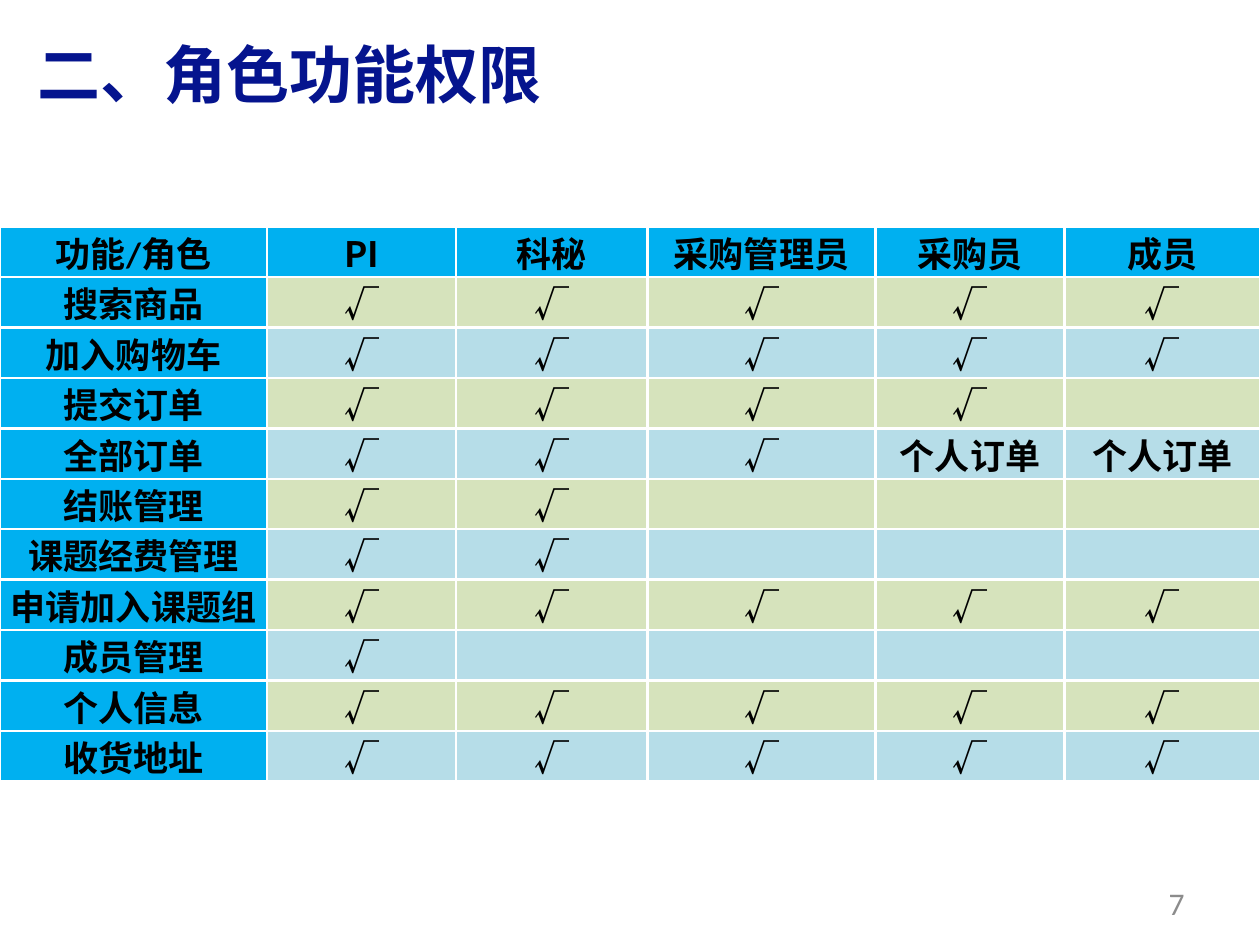
from dataclasses import dataclass

from lxml.etree import SubElement
from pptx import Presentation
from pptx.dml.color import RGBColor
from pptx.enum.text import MSO_ANCHOR as Anchor, PP_ALIGN as Align
from pptx.oxml.ns import qn
from pptx.util import Inches, Pt

W, H = 10, 7.5
LATIN, CJK = "Calibri", "Noto Sans CJK SC"
COLORS = {
    "title": "05148E", "number": "8C8C8C", "text": "000000", "border": "FFFFFF",
    "head": "00B0F0", "odd": "D6E3BC", "even": "B6DDE8",
}
COL_WIDTHS = [2.12, 1.5, 1.52, 1.81, 1.5, 1.55]
ROW_HEIGHT = 0.4
ROLES = ["功能/角色", "PI", "科秘", "采购管理员", "采购员", "成员"]
TICK = "√"


@dataclass
class Label:
    text: str
    left: float
    top: float
    width: float
    height: float
    size: int
    color: str
    font: str
    bold: bool = False
    align: Align = Align.LEFT
    anchor: Anchor = Anchor.TOP
    spacing: float = 1.0


@dataclass
class Permission:
    name: str
    ticks: int
    notes: tuple[str, ...] = ()

    def cells(self) -> list[str]:
        row = [self.name, *[TICK] * self.ticks, *self.notes]
        return row + [""] * (len(ROLES) - len(row))


LABELS = [
    Label("二、角色功能权限", 0.02, 0.04, 0.56, 0.07, 36, "title", CJK,
          bold=True, spacing=0.9),
    Label("7", 0.72, 0.93, 0.23, 0.05, 18, "number", LATIN,
          align=Align.RIGHT, anchor=Anchor.MIDDLE),
]
PERMISSIONS = [
    Permission("搜索商品", 5),
    Permission("加入购物车", 5),
    Permission("提交订单", 4),
    Permission("全部订单", 3, ("个人订单", "个人订单")),
    Permission("结账管理", 2),
    Permission("课题经费管理", 2),
    Permission("申请加入课题组", 5),
    Permission("成员管理", 1),
    Permission("个人信息", 5),
    Permission("收货地址", 5),
]


def rgb(name: str) -> RGBColor:
    return RGBColor.from_string(COLORS[name])


def add_run(p, text: str, size: int, color: str, font: str, bold: bool) -> None:
    r = p.add_run()
    r.text = text
    r.font.size, r.font.bold, r.font.name = Pt(size), bold, font
    r.font.color.rgb = rgb(color)
    SubElement(r.font._element, qn("a:ea"), typeface=CJK)


def add_label(s, label: Label) -> None:
    sp = s.shapes.add_textbox(Inches(label.left * W), Inches(label.top * H),
                              Inches(label.width * W), Inches(label.height * H))
    tf = sp.text_frame
    tf.word_wrap, tf.vertical_anchor = True, label.anchor
    p = tf.paragraphs[0]
    p.alignment, p.line_spacing = label.align, label.spacing
    add_run(p, label.text, label.size, label.color, label.font, label.bold)


def fill_cell(cell, text: str, fill: str) -> None:
    cell.margin_left = cell.margin_right = Inches(0.07)
    cell.margin_top = cell.margin_bottom = 0
    if text:
        p = cell.text_frame.paragraphs[0]
        p.alignment = Align.CENTER
        add_run(p, text, 20, "text", CJK if text in (TICK, "PI") else LATIN, True)
    props = cell._tc.get_or_add_tcPr()
    for side in ("lnL", "lnR", "lnT", "lnB"):
        line = SubElement(props, qn(f"a:{side}"), w=str(Pt(1.5)))
        SubElement(SubElement(line, qn("a:solidFill")), qn("a:srgbClr"),
                   val=COLORS["border"])
    cell.fill.solid()
    cell.fill.fore_color.rgb = rgb(fill)


def add_permission_table(s) -> None:
    rows = [ROLES, *[item.cells() for item in PERMISSIONS]]
    table = s.shapes.add_table(len(rows), len(ROLES), 0, Inches(0.24 * H), Inches(W),
                               Inches(ROW_HEIGHT * len(rows))).table
    for column, width in zip(table.columns, COL_WIDTHS):
        column.width = Inches(width)
    for i, row in enumerate(rows):
        table.rows[i].height = Inches(ROW_HEIGHT)
        for j, text in enumerate(row):
            band = "odd" if i % 2 else "even"
            fill_cell(table.cell(i, j), text, "head" if i == 0 or j == 0 else band)


def main() -> None:
    prs = Presentation()
    prs.slide_width, prs.slide_height = Inches(W), Inches(H)
    s = prs.slides.add_slide(prs.slide_layouts[6])
    for label in LABELS:
        add_label(s, label)
    add_permission_table(s)
    prs.save("out.pptx")


if __name__ == "__main__":
    main()
